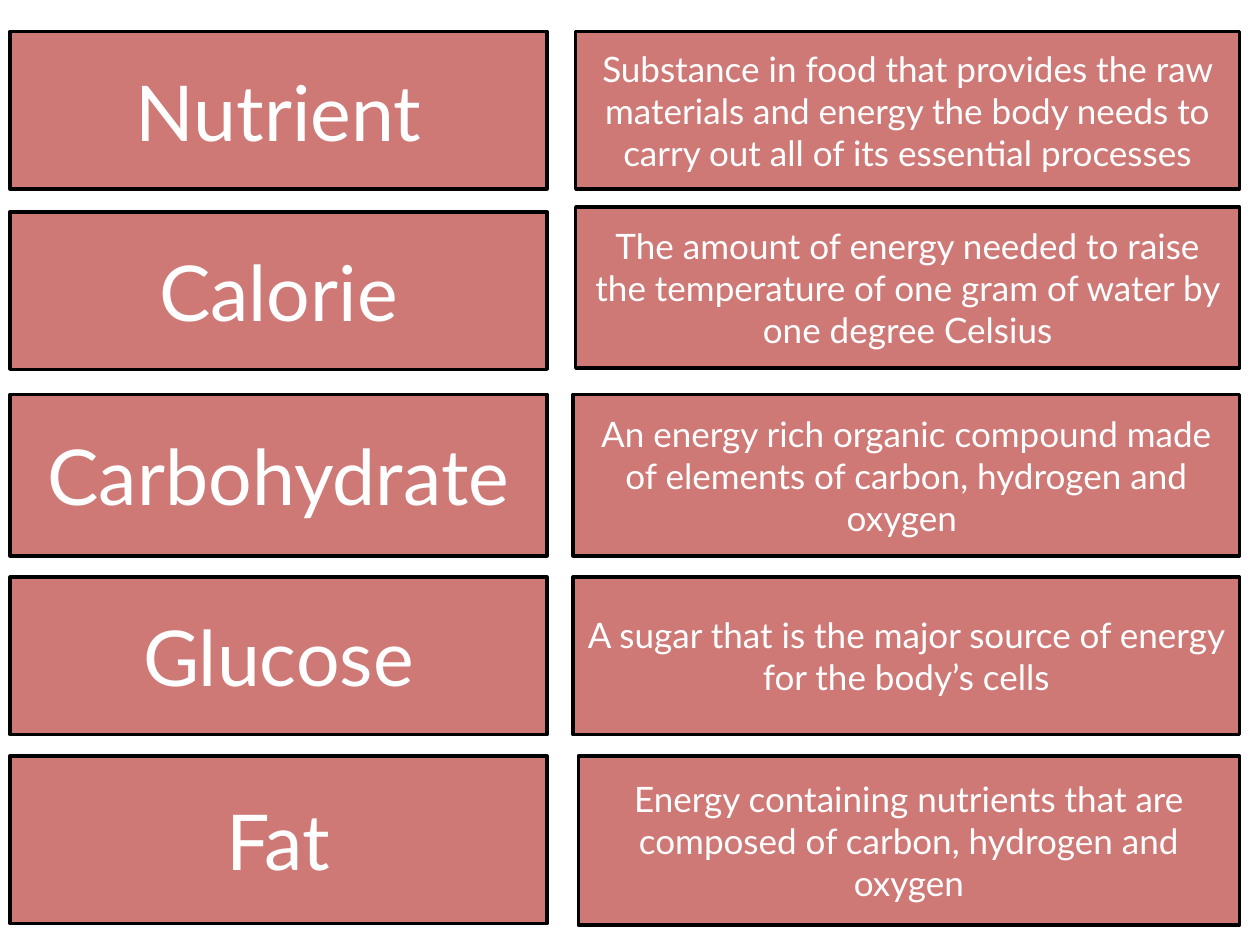
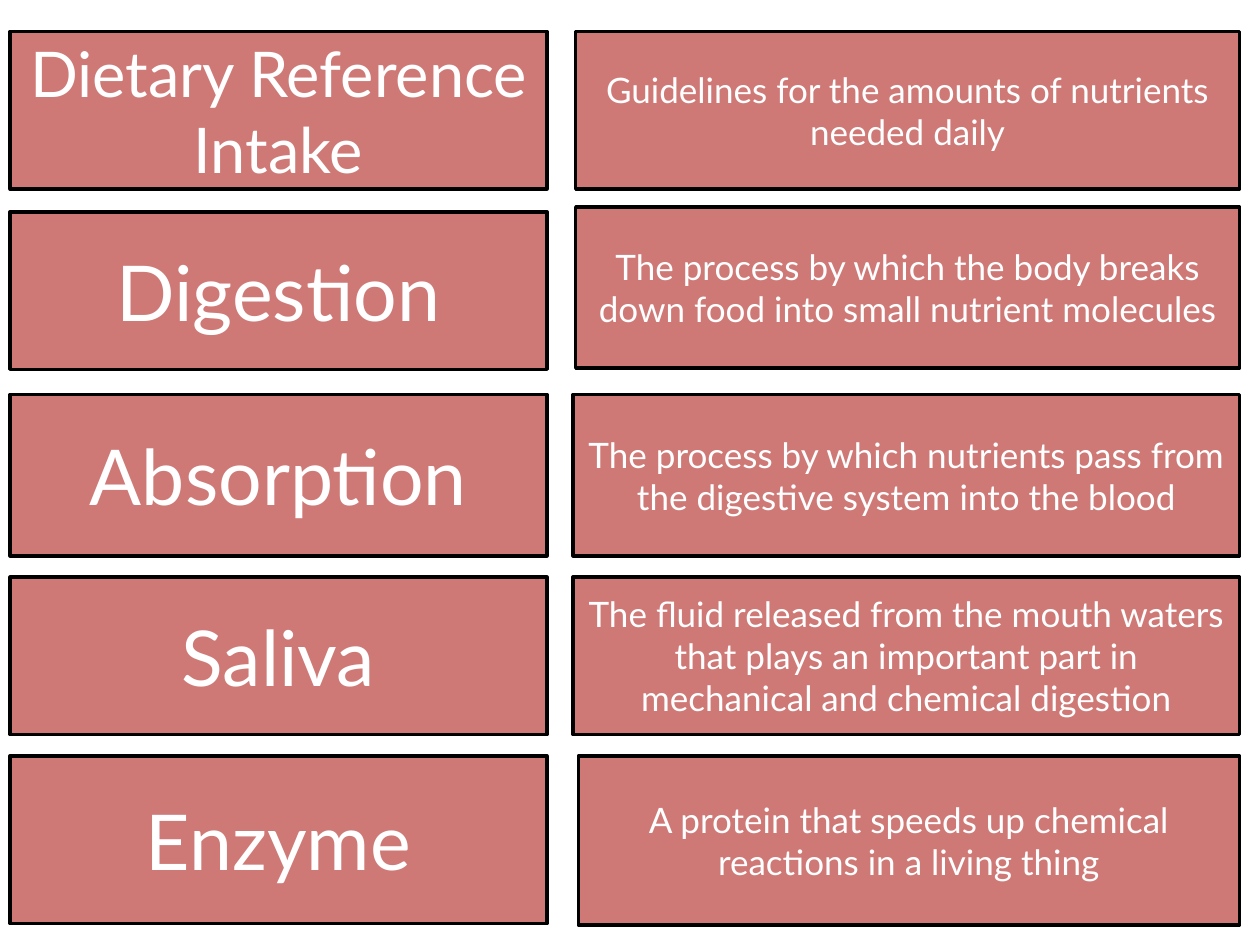
import pptx
import pptx.dml.color
import pptx.enum.shapes
import pptx.enum.text
import pptx.util

Pt = pptx.util.Pt

# One list per slide: (term, definition)
GLOSSARY = [
    [
        ("Nutrient", "Substance in food that provides the raw materials and energy "
                     "the body needs to carry out all of its essential processes"),
        ("Calorie", "The amount of energy needed to raise the temperature of one "
                    "gram of water by one degree Celsius"),
        ("Carbohydrate", "An energy rich organic compound made of elements of "
                         "carbon, hydrogen and oxygen "),
        ("Glucose", "A sugar that is the major source of energy for the body’s cells"),
        ("Fat", "Energy containing nutrients that are composed of carbon, "
                "hydrogen and oxygen"),
    ],
    [
        ("Dietary Reference Intake", "Guidelines for the amounts of nutrients needed daily"),
        ("Digestion", "The process by which the body breaks down food into small "
                      "nutrient molecules"),
        ("Absorption", "The process by which nutrients pass from the digestive "
                       "system into the blood"),
        ("Saliva", "The fluid released from the mouth waters that plays an important "
                   "part in mechanical and chemical digestion"),
        ("Enzyme", "A protein that speeds up chemical reactions in a living thing"),
    ],
]

COLOURS = {"card": "CF7977", "outline": "000000", "text": "FFFFFF"}
FONT = "Lato"
TERM_SIZE, LONG_TERM_SIZE, DEFINITION_SIZE = 44, 36, 20
LONG_TERM_LENGTH = 15

TERM_LEFT, TERM_WIDTH = 5.8, 306.7
DEFINITION_RIGHT = 708.3
# Per row: term (top, height), definition (left, top, height)
ROWS = [
    ((18, 90), (329, 18, 90)),
    ((121, 90), (329, 118.2, 92.2)),
    ((225.4, 92.2), (327.6, 225.4, 92.2)),
    ((329.8, 90), (327.6, 329.6, 90.2)),
    ((432, 95.8), (330.5, 432, 96.5)),
]


def colour(name):
    return pptx.dml.color.RGBColor.from_string(COLOURS[name])


def add_card(page, left, top, width, height, text, size):
    box = page.shapes.add_shape(
        pptx.enum.shapes.MSO_SHAPE.FLOWCHART_PROCESS,
        Pt(left), Pt(top), Pt(width), Pt(height))
    box.shadow.inherit = False
    box.fill.solid()
    box.fill.fore_color.rgb = colour("card")
    box.line.color.rgb = colour("outline")
    box.line.width = Pt(2)

    frame = box.text_frame
    frame.word_wrap = True
    frame.vertical_anchor = pptx.enum.text.MSO_ANCHOR.MIDDLE
    frame.text = text
    para = frame.paragraphs[0]
    para.alignment = pptx.enum.text.PP_ALIGN.CENTER
    span = para.runs[0]
    span.font.name = FONT
    span.font.size = Pt(size)
    span.font.color.rgb = colour("text")


def add_glossary_page(deck, entries):
    page = deck.slides.add_slide(deck.slide_layouts.get_by_name("Blank"))
    for (term, definition), (term_row, definition_row) in zip(entries, ROWS):
        top, height = term_row
        size = LONG_TERM_SIZE if len(term) > LONG_TERM_LENGTH else TERM_SIZE
        add_card(page, TERM_LEFT, top, TERM_WIDTH, height, term, size)
        left, top, height = definition_row
        add_card(page, left, top, DEFINITION_RIGHT - left, height,
                 definition, DEFINITION_SIZE)


def main():
    deck = pptx.Presentation()
    deck.slide_width, deck.slide_height = Pt(720), Pt(540)
    for entries in GLOSSARY:
        add_glossary_page(deck, entries)
    deck.save("out.pptx")


if __name__ == "__main__":
    main()
